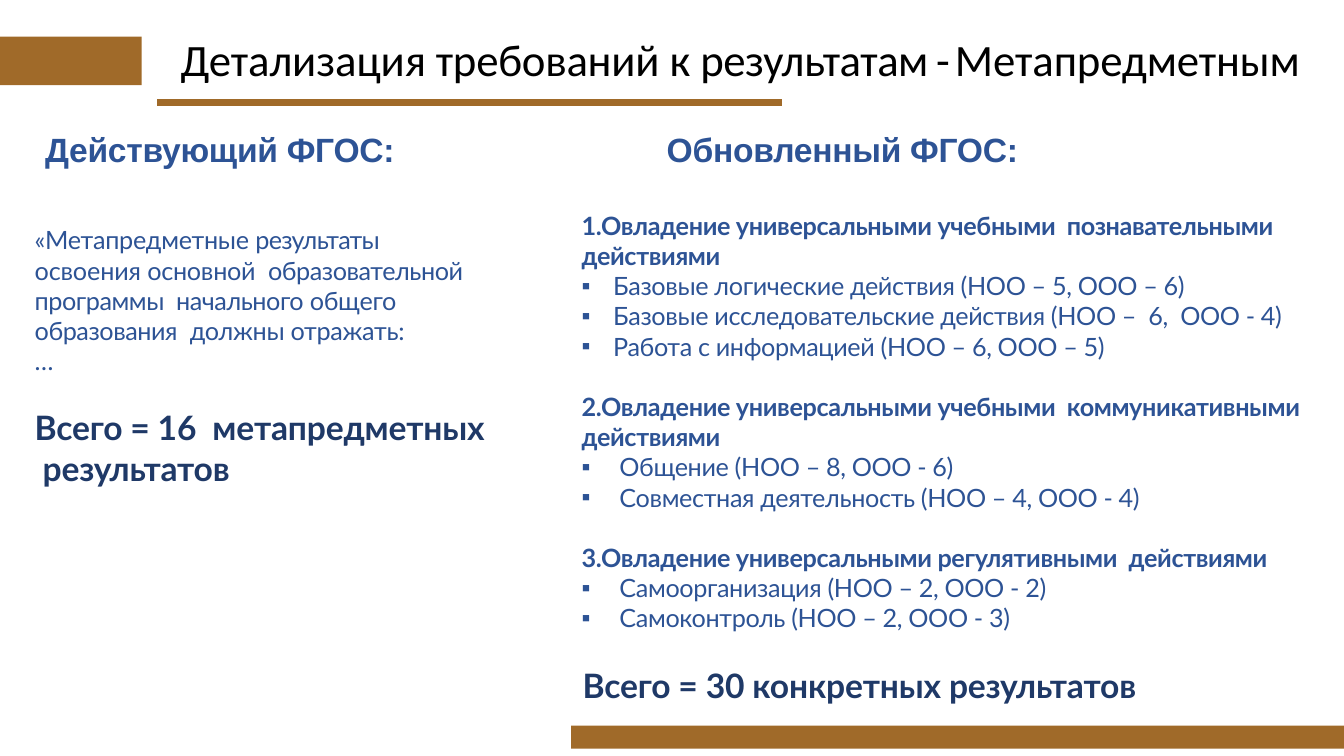
from dataclasses import dataclass

from lxml.etree import SubElement
from pptx import Presentation
from pptx.dml.color import RGBColor
from pptx.enum.shapes import MSO_CONNECTOR, MSO_SHAPE
from pptx.enum.text import MSO_ANCHOR, MSO_AUTO_SIZE
from pptx.oxml.ns import qn
from pptx.util import Emu, Pt


@dataclass(frozen=True)
class Theme:
    bronze: RGBColor = RGBColor(0xA0, 0x6A, 0x29)
    black: RGBColor = RGBColor(0, 0, 0)
    blue: RGBColor = RGBColor(0x2D, 0x53, 0x95)
    navy: RGBColor = RGBColor(0x1F, 0x39, 0x67)
    title_size: int = 32
    heading_size: int = 24
    body_size: int = 18
    rule_width: int = 5
    body_gap: float = 21.5
    total_gap: float = 22.5


THEME = Theme()
TITLE = ({"name": "Calibri", "size": Pt(THEME.title_size)}, THEME.black)
HEADING = ({"name": "Arial", "size": Pt(THEME.heading_size), "bold": True}, THEME.blue)
BODY = ({"name": "Lato", "size": Pt(THEME.body_size), "bold": False}, THEME.blue)
GROUP = ({"name": "Lato", "size": Pt(THEME.body_size), "bold": True}, THEME.blue)
TOTAL = ({"name": "Lato", "size": Pt(THEME.heading_size), "bold": True}, THEME.navy)

TITLE_RUNS = [
    ("Детализация ", -10), ("требований ", -20), ("к ", 0),
    ("результатам", -40), (" - М", -180), ("етапредметным", -10),
]
CURRENT_RUNS = [
    ("«Метапредметные ", -20), ("результаты  ", -50), ("освоения ", -10),
    ("основной  ", -20), ("образовательной программы  начального ", -30),
    ("общего ", -20), ("образования ", -30), (" должны отражать:", -20),
]
UPDATED_GROUPS = [
    ("1.Овладение универсальными учебными  познавательными действиями", 30, [
        "Базовые логические действия (НОО – 5, ООО – 6)",
        "Базовые исследовательские действия (НОО –  6,  ООО - 4)",
        "Работа с информацией (НОО – 6, ООО – 5)",
    ]),
    ("2.Овладение универсальными учебными  коммуникативными действиями", 36, [
        "Общение (НОО – 8, ООО - 6)",
        "Совместная деятельность (НОО – 4, ООО - 4)",
    ]),
    ("3.Овладение универсальными регулятивными  действиями", 36, [
        "Самоорганизация (НОО – 2, ООО - 2)",
        "Самоконтроль (НОО – 2, ООО - 3)",
    ]),
]


def px(length):
    return Emu(length * 9525)


def apply_format(target, values):
    for attribute, value in values.items():
        setattr(target, attribute, value)


def add_bar(slide, box):
    bar = slide.shapes.add_shape(MSO_SHAPE.RECTANGLE, *map(px, box))
    bar.shadow.inherit = False
    bar.fill.solid()
    bar.fill.fore_color.rgb = THEME.bronze
    bar.line.fill.background()


def add_rule(slide, left, top, width):
    rule = slide.shapes.add_connector(
        MSO_CONNECTOR.STRAIGHT, px(left), px(top), px(left + width), px(top))
    rule.line.color.rgb = THEME.bronze
    rule.line.width = Pt(THEME.rule_width)
    SubElement(rule._element.spPr, qn("a:effectLst"))


def add_frame(slide, box, inset=(0, 1, 0, 0), anchor=MSO_ANCHOR.TOP):
    frame = slide.shapes.add_textbox(*map(px, box)).text_frame
    left, top, right, bottom = map(px, inset)
    apply_format(frame, {
        "word_wrap": True, "auto_size": MSO_AUTO_SIZE.SHAPE_TO_FIT_TEXT,
        "vertical_anchor": anchor, "margin_left": left, "margin_top": top,
        "margin_right": right, "margin_bottom": bottom,
    })
    return frame


def write(frame, runs, style, gap=0, bullet_indent=0, left=0, right=0):
    first = frame.paragraphs[0]
    paragraph = frame.add_paragraph() if first.runs else first
    if gap:
        paragraph.space_before = Pt(gap)
    properties = paragraph._p.get_or_add_pPr()
    properties.set("marL", str(px(bullet_indent or left)))
    properties.set("marR", str(px(right)))
    properties.set("indent", str(px(-bullet_indent)))
    if bullet_indent:
        SubElement(properties, qn("a:buFont"), typeface="Arial")
        SubElement(properties, qn("a:buChar"), char="▪")
    font_values, color = style
    for text, tracking in runs:
        for number, line in enumerate(text.split("\v")):
            if number:
                paragraph.add_line_break()
            run = paragraph.add_run()
            run.text = line
            apply_format(run.font, font_values)
            run.font.color.rgb = color
            run._r.get_or_add_rPr().set("spc", str(tracking))


def build_title(slide, left, top, width, height):
    add_bar(slide, (left, top + 6, 135, 46))
    add_rule(slide, left + 150, top + 69, 595)
    frame = add_frame(slide, (left + 171, top, width - 171, height),
                      anchor=MSO_ANCHOR.MIDDLE)
    write(frame, TITLE_RUNS, TITLE, left=1)


def build_headings(slide, left, top, width, height):
    for offset, heading in ((0, "Действующий ФГОС:"), (592, "Обновленный ФГОС:")):
        frame = add_frame(slide, (left + offset, top, width, height))
        write(frame, [(heading, -20)], HEADING, left=1)


def build_current(slide, *box):
    frame = add_frame(slide, box)
    write(frame, CURRENT_RUNS, BODY, left=1, right=17)
    write(frame, [("…", 0)], BODY, left=1)
    write(frame, [("Всего = 16  метапредметных\v результатов", -10)], TOTAL,
          gap=THEME.total_gap, left=1)


def build_updated(slide, left, top, width, height):
    add_bar(slide, (left, top + 496, 1280 - left, 22))
    frame = add_frame(slide, (left, top, width, height), inset=(10, 5, 10, 5))
    for number, (group, indent, actions) in enumerate(UPDATED_GROUPS):
        write(frame, [(group, -25)], GROUP, gap=THEME.body_gap if number else 0)
        for action in actions:
            write(frame, [(action, -25)], BODY, bullet_indent=indent)
    write(frame, [("Всего = 30 конкретных результатов", -10)], TOTAL,
          gap=THEME.total_gap, left=1)


def main():
    presentation = Presentation()
    presentation.slide_width = px(1280)
    presentation.slide_height = px(720)
    slide = presentation.slides.add_slide(presentation.slide_layouts[6])
    build_title(slide, 0, 29, 1256, 53)
    build_headings(slide, 42, 122, 400, 41)
    build_current(slide, 32, 213, 430, 254)
    build_updated(slide, 544, 195, 724, 525)
    presentation.save("out.pptx")


if __name__ == "__main__":
    main()
